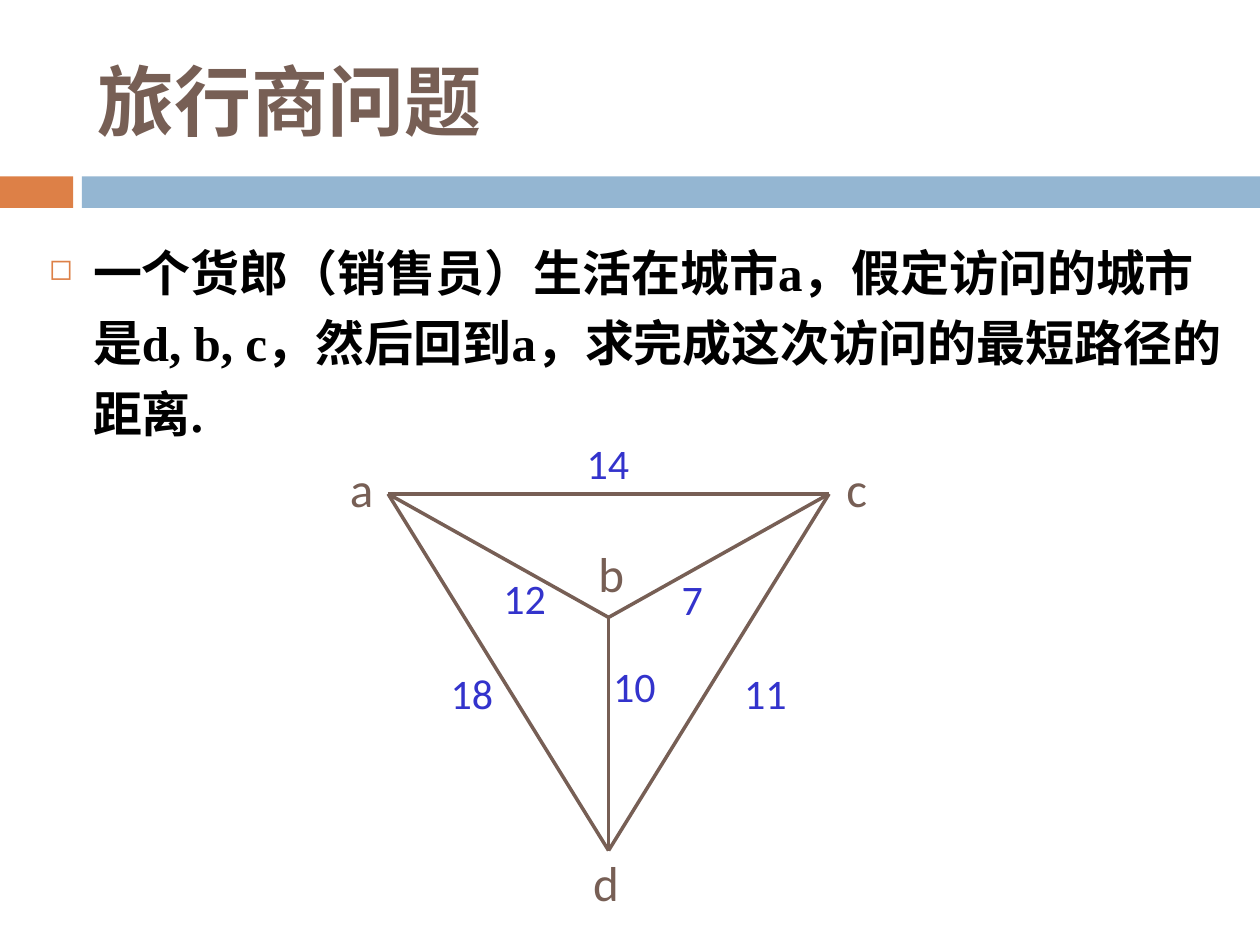
from typing import NamedTuple

from lxml.etree import SubElement
from pptx import Presentation
from pptx.dml.color import RGBColor
from pptx.enum.shapes import MSO_CONNECTOR, MSO_SHAPE
from pptx.enum.text import MSO_ANCHOR, PP_ALIGN
from pptx.oxml.ns import qn
from pptx.util import Inches, Pt

BROWN, BLUE, ORANGE, NUMBER_BLUE = "775F55", "94B6D2", "DD8047", "3333CC"


class Label(NamedTuple):
    text: str
    left: float
    top: float
    width: float


class Style(NamedTuple):
    size: int
    color: str


CITY_STYLE = Style(28, BROWN)
DISTANCE_STYLE = Style(24, NUMBER_BLUE)
LABEL_HEIGHT = 0.5

CITIES = {"a": (3.08, 3.92), "b": (4.83, 4.9), "c": (6.58, 3.92), "d": (4.83, 6.75)}
ROADS = ["ab", "bc", "db", "ac", "dc", "da"]
CITY_LABELS = [
    Label("a", 2.58, 3.62, 0.58),
    Label("b", 4.56, 4.3, 0.58),
    Label("c", 6.51, 3.62, 0.58),
    Label("d", 4.52, 6.75, 0.58),
]
DISTANCE_LABELS = [
    Label("18", 3.41, 5.25, 0.67),
    Label("14", 4.41, 3.42, 0.83),
    Label("11", 5.74, 5.25, 0.67),
    Label("10", 4.7, 5.19, 0.67),
    Label("12", 3.83, 4.49, 0.67),
    Label("7", 5.16, 4.5, 0.67),
]


def rgb(value: str) -> RGBColor:
    return RGBColor.from_string(value)


def write(paragraph, text: str, style: Style, name="Calibri", bold=False) -> None:
    run = paragraph.add_run()
    run.text = text
    for key, value in {"name": name, "size": Pt(style.size), "bold": bold}.items():
        setattr(run.font, key, value)
    run.font.color.rgb = rgb(style.color)


def place(shape, left: float, top: float, width: float, height: float) -> None:
    box = {"left": left, "top": top, "width": width, "height": height}
    for key, value in box.items():
        setattr(shape, key, Inches(value))


def add_bar(slide, left: float, width: float, color: str) -> None:
    bar = slide.shapes.add_shape(
        MSO_SHAPE.RECTANGLE, Inches(left), Inches(1.4), Inches(width), Inches(0.25))
    bar.shadow.inherit = False
    bar.fill.solid()
    bar.fill.fore_color.rgb = rgb(color)
    bar.line.fill.background()


def add_road(slide, start: str, end: str) -> None:
    points = [Inches(value) for value in CITIES[start] + CITIES[end]]
    road = slide.shapes.add_connector(MSO_CONNECTOR.STRAIGHT, *points)
    road.line.color.rgb = rgb(BROWN)
    road.line.width = Pt(2)
    SubElement(road._element.spPr, qn("a:effectLst"))


def add_label(slide, label: Label, style: Style) -> None:
    shape = slide.shapes.add_shape(
        MSO_SHAPE.RECTANGULAR_CALLOUT, Inches(label.left), Inches(label.top),
        Inches(label.width), Inches(LABEL_HEIGHT))
    shape.shadow.inherit = False
    shape.fill.background()
    shape.line.fill.background()
    shape.text_frame.vertical_anchor = MSO_ANCHOR.MIDDLE
    paragraph = shape.text_frame.paragraphs[0]
    paragraph.alignment = PP_ALIGN.CENTER
    write(paragraph, label.text, style)


def add_bullet(paragraph, indent: float) -> None:
    properties = paragraph._p.get_or_add_pPr()
    properties.set("marL", str(Inches(indent)))
    properties.set("indent", str(Inches(-indent)))
    color = SubElement(properties, qn("a:buClr"))
    SubElement(color, qn("a:srgbClr")).set("val", ORANGE)
    SubElement(properties, qn("a:buSzPct")).set("val", "60000")
    SubElement(properties, qn("a:buChar")).set("char", "◻")


def main() -> None:
    presentation = Presentation()
    presentation.slide_width, presentation.slide_height = Inches(10), Inches(7.5)
    slide = presentation.slides.add_slide(presentation.slide_layouts[5])

    # Title and the bars below it
    title = slide.shapes.title
    place(title, 0.67, 0.25, 8.92, 1.08)
    title.text_frame.vertical_anchor = MSO_ANCHOR.MIDDLE
    heading = title.text_frame.paragraphs[0]
    heading.alignment = PP_ALIGN.LEFT
    write(heading, "旅行商问题", Style(44, BROWN), bold=True)
    add_bar(slide, 0, 0.58, ORANGE)
    add_bar(slide, 0.65, 9.35, BLUE)

    # Problem statement
    body = slide.shapes.add_textbox(0, 0, 0, 0)
    place(body, 0.29, 1.78, 9.5, 2)
    body.text_frame.word_wrap = True
    statement = body.text_frame.paragraphs[0]
    for key, value in {"line_spacing": 1.2, "space_before": Pt(7)}.items():
        setattr(statement, key, value)
    add_bullet(statement, 0.35)
    write(statement,
          "一个货郎（销售员）生活在城市a，假定访问的城市是d, b, c，"
          "然后回到a，求完成这次访问的最短路径的距离.",
          Style(28, "000000"), name="Times New Roman", bold=True)

    # Graph of cities and distances
    for start, end in ROADS:
        add_road(slide, start, end)
    for labels, style in ((DISTANCE_LABELS, DISTANCE_STYLE), (CITY_LABELS, CITY_STYLE)):
        for label in labels:
            add_label(slide, label, style)

    presentation.save("out.pptx")


if __name__ == "__main__":
    main()
